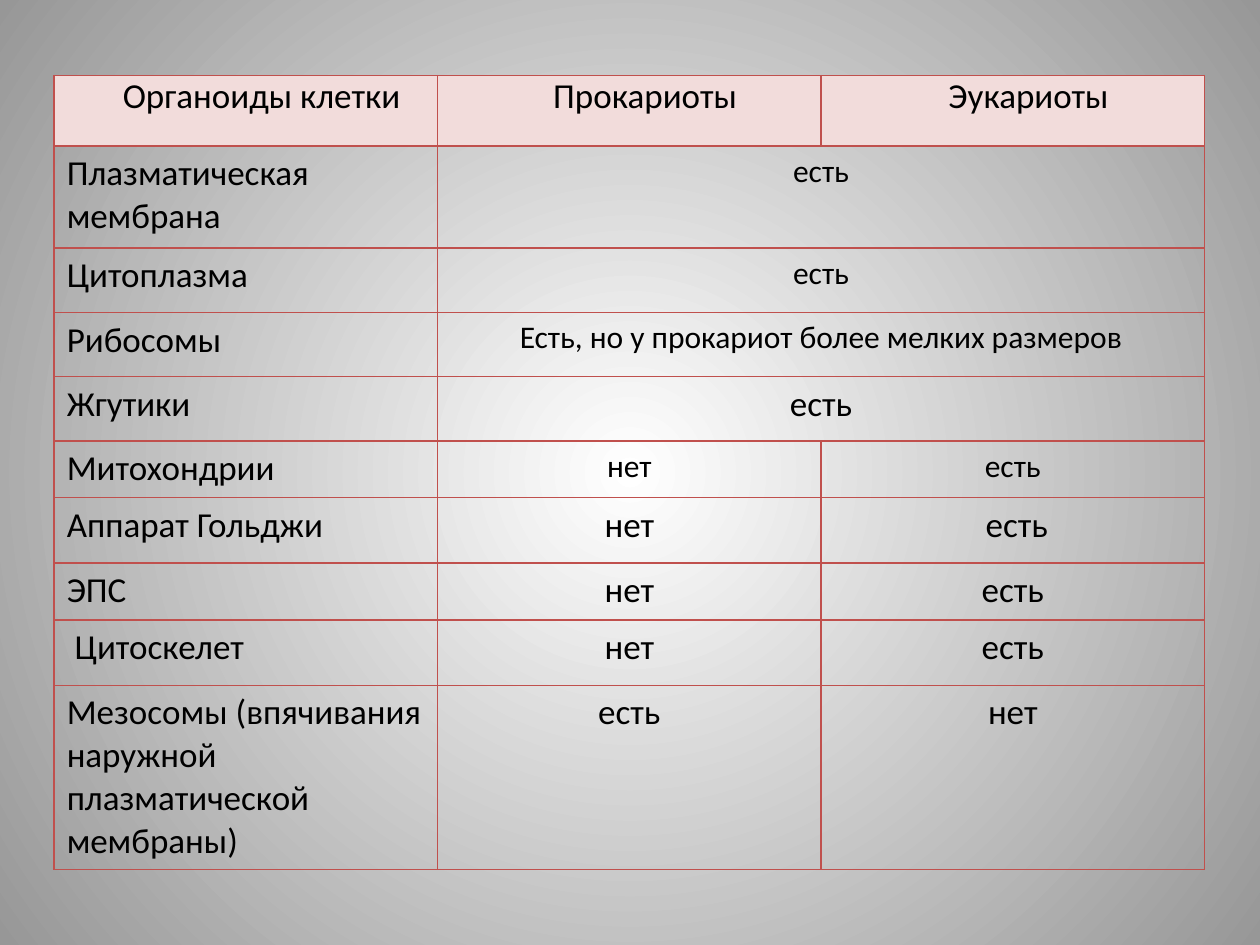
"""Builds a slide with a table comparing the organelles of prokaryotes and eukaryotes."""
from lxml.etree import SubElement
from pptx import Presentation
from pptx.dml.color import RGBColor
from pptx.enum.text import PP_ALIGN as Align
from pptx.oxml.ns import qn
from pptx.util import Inches, Pt

COLORS = {"center": "FFFFFF", "edge": "979797", "header": "F2DCDB",
          "border": "C0504D", "text": "000000"}
FONT = "Calibri"
SMALL, NORMAL = 18, 20
HEADER = ("Органоиды клетки", "Прокариоты", "Эукариоты")
# Row height, answer size, organelle, then one shared answer or one per cell type
ROWS = [
    (0.81, SMALL, "Плазматическая мембрана", "есть"),
    (0.51, SMALL, "Цитоплазма", "есть"),
    (0.51, SMALL, "Рибосомы", "Есть, но у прокариот более мелких размеров"),
    (0.51, NORMAL, "Жгутики", "есть"),
    (0.45, SMALL, "Митохондрии", "нет", "есть"),
    (0.52, NORMAL, "Аппарат Гольджи", "нет", " есть"),
    (0.45, NORMAL, "ЭПС", "нет", "есть"),
    (0.52, NORMAL, " Цитоскелет", "нет", "есть"),
    (1.41, NORMAL, "Мезосомы (впячивания наружной плазматической мембраны)", "есть", "нет"),
]
HEADER_HEIGHT = 0.56
LEFT, TOP, WIDTH = 0.43, 0.6, 9.13


def rgb(name):
    return RGBColor.from_string(COLORS[name])


def paint_background(slide):
    fill = slide.background.fill
    fill.gradient()
    for stop, position, name in zip(fill.gradient_stops, (0, 1), ("center", "edge")):
        stop.position = position
        stop.color.rgb = rgb(name)
    gradient = next(slide.element.iter(qn("a:gradFill")))
    gradient.remove(gradient.find(qn("a:lin")))
    radial = SubElement(gradient, qn("a:path"), path="circle")
    SubElement(radial, qn("a:fillToRect"), l="50000", t="50000", r="50000", b="50000")


def style_cell(cell, header):
    properties = cell._tc.get_or_add_tcPr()
    for side in ("lnL", "lnR", "lnT", "lnB"):
        line = SubElement(properties, qn(f"a:{side}"), w=str(Pt(1)))
        solid = SubElement(line, qn("a:solidFill"))
        SubElement(solid, qn("a:srgbClr"), val=COLORS["border"])
    if header:
        cell.fill.solid()
        cell.fill.fore_color.rgb = rgb("header")
    else:
        cell.fill.background()
    cell.margin_left = cell.margin_right = Inches(0.07 if header else 0.1)
    cell.margin_top = cell.margin_bottom = Inches(0 if header else 0.05)


def write(cell, text, size, align, indent=0):
    paragraph = cell.text_frame.paragraphs[0]
    paragraph.alignment = align
    if indent:
        paragraph._p.get_or_add_pPr().set("marL", str(Inches(indent)))
    run = paragraph.add_run()
    run.text = text
    run.font.name, run.font.size = FONT, Pt(size)
    run.font.bold = False
    run.font.color.rgb = rgb("text")


def add_organelle_table(slide):
    heights = [HEADER_HEIGHT] + [row[0] for row in ROWS]
    columns = len(HEADER)
    table = slide.shapes.add_table(len(heights), columns, Inches(LEFT), Inches(TOP),
                                   Inches(WIDTH), Inches(sum(heights))).table
    table.first_row = table.horz_banding = False
    for column in table.columns:
        column.width = Inches(WIDTH / columns)
    for index, height in enumerate(heights):
        table.rows[index].height = Inches(height)
        for column in range(columns):
            style_cell(table.cell(index, column), header=index == 0)
    for column, title in enumerate(HEADER):
        write(table.cell(0, column), title, NORMAL, Align.CENTER, indent=0.25)
    for index, (_, size, organelle, *answers) in enumerate(ROWS, 1):
        write(table.cell(index, 0), organelle, NORMAL, Align.LEFT)
        if len(answers) == 1:
            table.cell(index, 1).merge(table.cell(index, columns - 1))
        for column, answer in enumerate(answers, 1):
            write(table.cell(index, column), answer, size, Align.CENTER)


def main():
    presentation = Presentation()
    presentation.slide_width, presentation.slide_height = Inches(10), Inches(7.5)
    slide = presentation.slides.add_slide(presentation.slide_layouts[6])
    paint_background(slide)
    add_organelle_table(slide)
    presentation.save("out.pptx")


if __name__ == "__main__":
    main()
